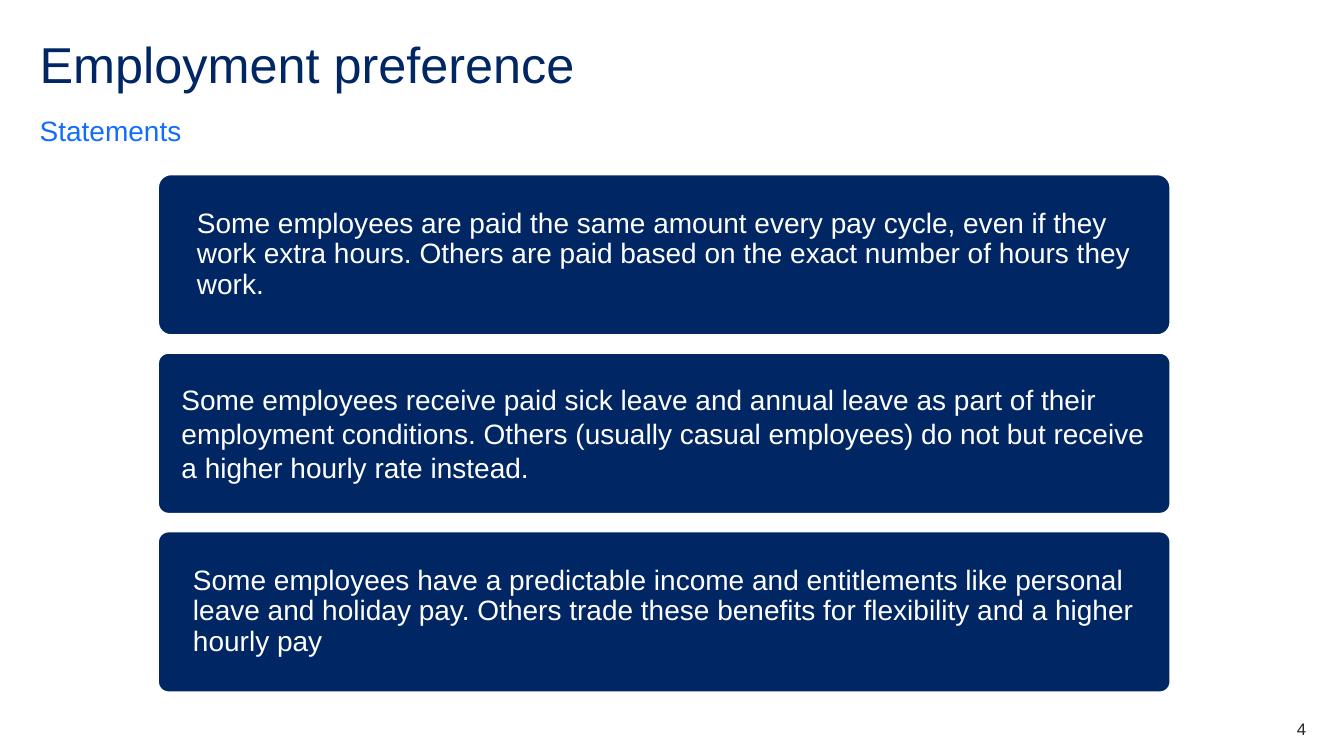
from pptx import Presentation
from pptx.dml.color import RGBColor
from pptx.enum.shapes import MSO_SHAPE
from pptx.enum.text import MSO_ANCHOR, PP_ALIGN
from pptx.util import Cm, Pt

NAVY = RGBColor(0x00, 0x26, 0x64)
BLUE = RGBColor(0x14, 0x6C, 0xFD)
WHITE = RGBColor(0xFF, 0xFF, 0xFF)
GREY = RGBColor(0x22, 0x27, 0x2B)
ROUNDED = MSO_SHAPE.ROUNDED_RECTANGLE
TOP, MIDDLE, BOTTOM = MSO_ANCHOR.TOP, MSO_ANCHOR.MIDDLE, MSO_ANCHOR.BOTTOM
LEFT, RIGHT = PP_ALIGN.LEFT, PP_ALIGN.RIGHT


def set_text(sp, text, size, color, anchor=TOP, align=LEFT, insets=(0, 0, 0, 0)):
    tf = sp.text_frame
    tf.word_wrap = True
    tf.vertical_anchor = anchor
    tf.margin_left, tf.margin_top, tf.margin_right, tf.margin_bottom = map(Cm, insets)
    p = tf.paragraphs[0]
    p.text = text
    p.alignment = align
    font = p.runs[0].font
    font.name, font.size, font.color.rgb = "Arial", Pt(size), color
    return p


def add_text(s, left, top, width, height, *args, **kwargs):
    sp = s.shapes.add_textbox(Cm(left), Cm(top), Cm(width), Cm(height))
    return set_text(sp, *args, **kwargs)


prs = Presentation()
prs.slide_width, prs.slide_height = Cm(33.87), Cm(19.05)
s = prs.slides.add_slide(prs.slide_layouts[6])

# Title and subtitle
p = add_text(s, 1, 1, 31.9, 1.52, "Employment preference", 36, NAVY)
p.line_spacing = 0.9
p = add_text(s, 1, 2.72, 31.9, 0.99, "Statements", 20, BLUE, anchor=BOTTOM)
p.line_spacing = 1.5
p.space_after = Pt(12)

# Statement cards: text, corner radius, left inset, line spacing
statements = [
    ("Some employees are paid the same amount every pay cycle, even if they work "
     "extra hours. Others are paid based on the exact number of hours they work.",
     0.08, 0.88, 0.9),
    ("Some employees receive paid sick leave and annual leave as part of their "
     "employment conditions. Others (usually casual employees) do not but receive "
     "a higher hourly rate instead.",
     0.063, 0.51, 1.0),
    ("Some employees have a predictable income and entitlements like personal leave "
     "and holiday pay. Others trade these benefits for flexibility and a higher "
     "hourly pay",
     0.063, 0.8, 0.9),
]
for i, (text, radius, inset, spacing) in enumerate(statements):
    sp = s.shapes.add_shape(ROUNDED, Cm(3.99), Cm(4.4 + 4.5 * i), Cm(25.5), Cm(4.04))
    sp.adjustments[0] = radius
    sp.shadow.inherit = False
    sp.fill.solid()
    sp.fill.fore_color.rgb = NAVY
    sp.line.color.rgb = WHITE
    sp.line.width = Pt(1)
    p = set_text(sp, text, 20, WHITE, anchor=MIDDLE, insets=(inset, 0.18, 0.51, 0.18))
    p.line_spacing = spacing

# Page number
add_text(s, 30.91, 18.11, 2.01, 0.51, "4", 12, GREY, align=RIGHT)

prs.save("out.pptx")
